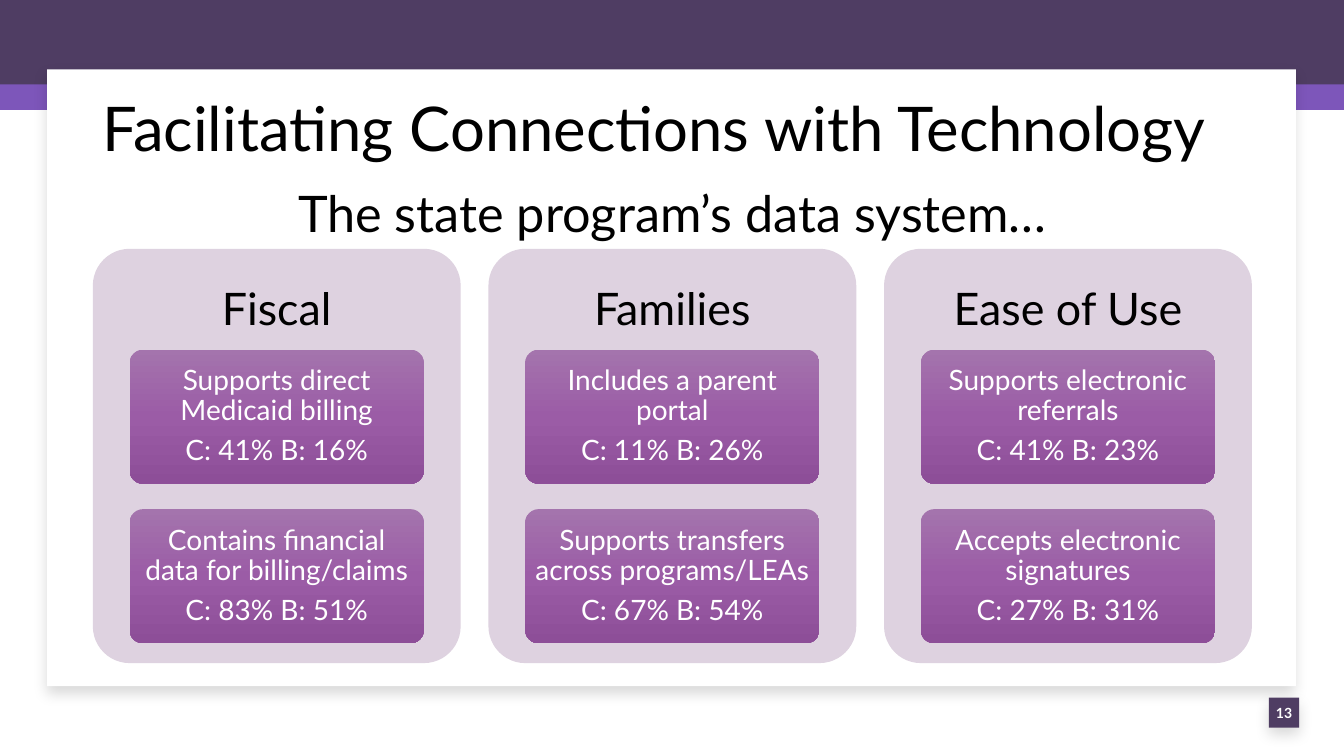
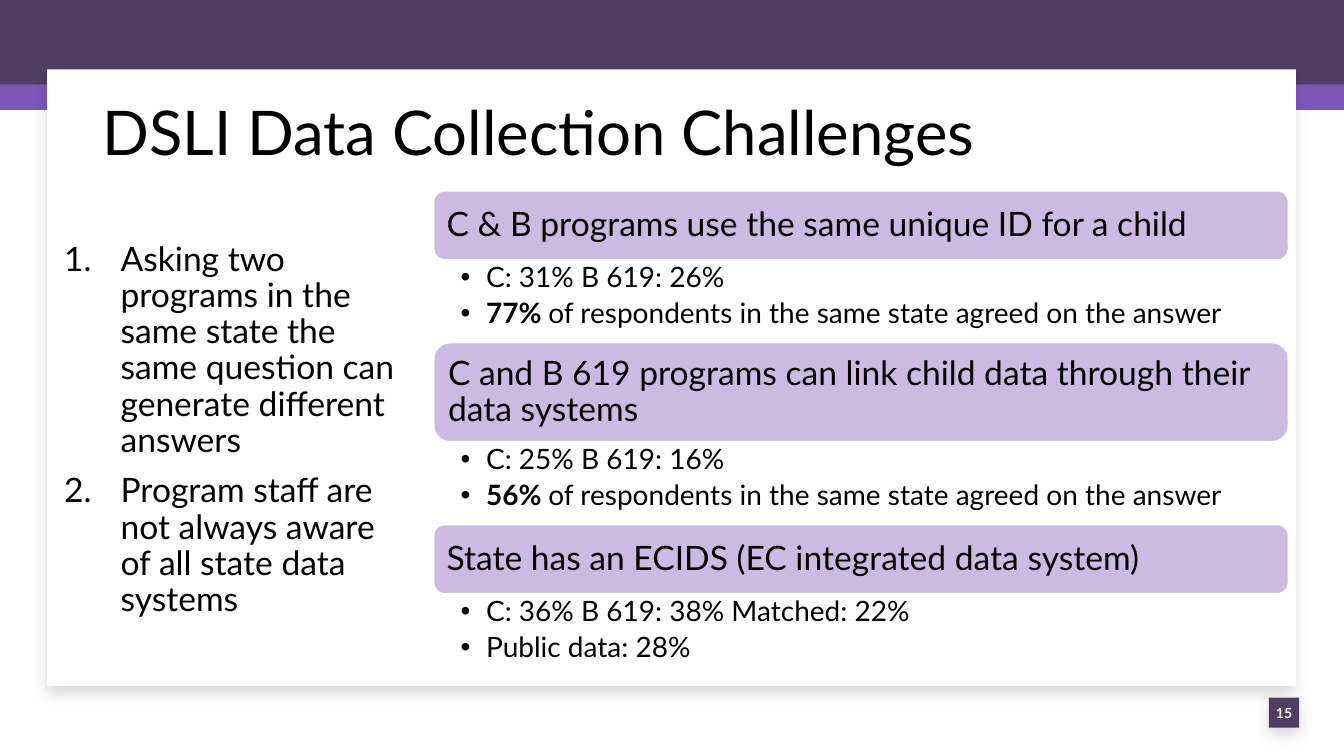
import pptx
import pptx.dml.color
import pptx.enum.shapes
import pptx.enum.text
import pptx.oxml
import pptx.oxml.ns
import pptx.util
from lxml import etree

Cm = pptx.util.Cm
Pt = pptx.util.Pt
SHAPE = pptx.enum.shapes.MSO_SHAPE
ALIGN = pptx.enum.text.PP_ALIGN
ANCHOR = pptx.enum.text.MSO_ANCHOR
qn = pptx.oxml.ns.qn

FONT = "Lato"
COLORS = {
    "white": "FFFFFF",
    "black": "000000",
    "band": "4F3D63",
    "stripe": "7D56BA",
    "panel": "DED2E0",
    "heading": "CBBBE3",
}
CARD_GRADIENT = [(0, "A474AD"), (50, "9B5CA6"), (100, "8D4E98")]
DEFAULT_INSETS = (0.25, 0.13, 0.25, 0.13)

PANELS = [
    ("Fiscal", [
        ("Supports direct Medicaid billing", "C: 41% B: 16%"),
        ("Contains financial data for billing/claims", "C: 83% B: 51%"),
    ]),
    ("Families", [
        ("Includes a parent portal", "C: 11% B: 26%"),
        ("Supports transfers across programs/LEAs", "C: 67% B: 54%"),
    ]),
    ("Ease of Use", [
        ("Supports electronic referrals", "C: 41% B: 23%"),
        ("Accepts electronic signatures", "C: 27% B: 31%"),
    ]),
]
CHALLENGES = [
    "Asking two programs in the same state the same question can generate different answers",
    "Program staff are not always aware of all state data systems",
]
AGREED = "of respondents in the same state agreed on the answer"
FINDINGS = [
    ("C & B programs use the same unique ID for a child", 1.76,
     [("", "C: 31% B 619: 26%"), ("77% ", AGREED)]),
    ("C and B 619 programs can link child data through their data systems", 2.51,
     [("", "C: 25% B 619: 16%"), ("56% ", AGREED)]),
    ("State has an ECIDS (EC integrated data system)", 1.76,
     [("", "C: 36% B 619: 38% Matched: 22%"), ("", "Public data: 28%")]),
]


def rgb(name):
    """Return the named colour."""
    return pptx.dml.color.RGBColor.from_string(COLORS[name])


def add_block(page, box, fill=None, kind=SHAPE.RECTANGLE, radius=None):
    """Add a preset shape without outline or shadow."""
    shape = page.shapes.add_shape(kind, *map(Cm, box))
    shape.shadow.inherit = False
    shape.line.fill.background()
    if fill:
        shape.fill.solid()
        shape.fill.fore_color.rgb = rgb(fill)
    if radius is not None:
        shape.adjustments[0] = radius
    return shape


def add_soft_shadow(shape):
    """Give a shape a faint shadow that falls downwards."""
    effects = shape._element.spPr.find(qn("a:effectLst"))
    shadow = etree.SubElement(effects, qn("a:outerShdw"), blurRad=str(Pt(10)),
                              dist=str(Pt(5)), dir="5400000", algn="t", rotWithShape="0")
    color = etree.SubElement(shadow, qn("a:srgbClr"), val=COLORS["black"])
    etree.SubElement(color, qn("a:alpha"), val="15000")


def fill_gradient(shape, stops):
    """Fill a shape with a gradient from top to bottom."""
    gradient = pptx.oxml.parse_xml(
        '<a:gradFill xmlns:a="http://schemas.openxmlformats.org/drawingml/2006/main"'
        ' rotWithShape="1"><a:gsLst/><a:lin ang="5400000" scaled="0"/></a:gradFill>')
    for position, color in stops:
        stop = etree.SubElement(gradient[0], qn("a:gs"), pos=str(position * 1000))
        etree.SubElement(stop, qn("a:srgbClr"), val=color)
    shape._element.spPr.find(qn("a:prstGeom")).addnext(gradient)


def set_bullet(para, indent, tag, **values):
    """Give a paragraph a hanging bullet or number."""
    properties = para._p.get_or_add_pPr()
    properties.set("marL", str(Cm(indent)))
    properties.set("indent", str(-Cm(indent)))
    if tag == "a:buChar":
        etree.SubElement(properties, qn("a:buFont"), typeface="Arial")
    etree.SubElement(properties, qn(tag), **values)


def write(shape, lines, size, color="black", align=ALIGN.LEFT, anchor=ANCHOR.MIDDLE,
          insets=DEFAULT_INSETS, spacing=0.9, before=0, after=0, bold=False, bullet=None):
    """Write lines into a shape; a line may be a pair of bold lead and plain rest."""
    frame = shape.text_frame
    frame.word_wrap = True
    frame.vertical_anchor = anchor
    (frame.margin_left, frame.margin_top,
     frame.margin_right, frame.margin_bottom) = map(Cm, insets)
    for index, line in enumerate(lines):
        lead, rest = line if isinstance(line, tuple) else ("", line)
        para = frame.add_paragraph() if index else frame.paragraphs[0]
        para.text = lead or rest
        if lead:
            para.add_run().text = rest
        if bullet:
            set_bullet(para, **bullet)
        para.alignment = align
        para.line_spacing = spacing
        para.space_before = Pt(before if index else 0)
        para.space_after = Pt(after)
        for position, span in enumerate(para.runs):
            span.font.name = FONT
            span.font.size = Pt(size)
            span.font.bold = bold or bool(lead and position == 0)
            span.font.color.rgb = rgb(color)


def add_text(page, box, lines, size, **style):
    """Add a text box."""
    write(page.shapes.add_textbox(*map(Cm, box)), lines, size, **style)


def add_page(deck, title, number, title_top):
    """Add a page with the shared bands, sheet, number and title."""
    page = deck.slides.add_slide(deck.slide_layouts[6])
    add_block(page, (0, 1.5, 33.87, 1.27), "stripe")
    add_block(page, (0, 0, 33.87, 2.13), "band")
    add_soft_shadow(add_block(page, (1.19, 1.75, 31.47, 15.54), "white"))
    badge = add_block(page, (31.98, 17.58, 0.76, 0.76), "band")
    add_soft_shadow(badge)
    write(badge, [number], 10, color="white", align=ALIGN.CENTER,
          insets=(0, 0, 0, 0), spacing=1, bold=True)
    add_text(page, (2.34, title_top, 29.21, 2.79), [title], 44)
    return page


def add_panel(page, box, heading, cards):
    """Add a panel with a heading and a stack of cards."""
    left, top, width, height = box
    add_block(page, box, "panel", SHAPE.ROUNDED_RECTANGLE, 0.1)
    add_text(page, (left, top, width, 3.13), [heading], 32, align=ALIGN.CENTER,
             insets=(0.33,) * 4, after=11.2)
    for index, lines in enumerate(cards):
        card_box = (left + 0.1 * width, top + 2.54 + index * 4.02, 0.8 * width, 3.38)
        card = add_block(page, card_box, kind=SHAPE.ROUNDED_RECTANGLE, radius=0.1)
        fill_gradient(card, CARD_GRADIENT)
        write(card, list(lines), 20, color="white", align=ALIGN.CENTER,
              insets=(0.15, 0.1, 0.15, 0.1), after=7)


def add_panels(page, box, panels, gap):
    """Spread panels evenly over a box."""
    left, top, width, height = box
    panel_width = (width - gap * (len(panels) - 1)) / len(panels)
    for index, (heading, cards) in enumerate(panels):
        panel_left = left + index * (panel_width + gap)
        add_panel(page, (panel_left, top, panel_width, height), heading, cards)


def add_findings(page, left, top, width, findings):
    """Stack headings, each with its bulleted details below."""
    detail_height = 2.07
    for heading, height, details in findings:
        bar = add_block(page, (left, top, width, height), "heading", SHAPE.ROUNDED_RECTANGLE)
        bar.line.color.rgb = rgb("white")
        bar.line.width = Pt(1.5)
        write(bar, [heading], 24, after=8.4, insets=(0.25,) * 4)
        top += height
        add_text(page, (left, top, width, detail_height), details, 20,
                 anchor=ANCHOR.TOP, insets=(0.69, 0.08, 0.41, 0.08), after=4,
                 bullet={"indent": 0.64, "tag": "a:buChar", "char": "•"})
        top += detail_height


def build_technology(deck):
    """Build the page on the data system."""
    page = add_page(deck, "Facilitating Connections with Technology", "13", 1.93)
    add_text(page, (6.86, 4.47, 20.17, 1.8), ["The state program’s data system…"], 36,
             align=ALIGN.CENTER, anchor=ANCHOR.TOP, spacing=1)
    add_panels(page, (2.34, 6.27, 29.21, 10.44), PANELS, 0.7)


def build_challenges(deck):
    """Build the page on data collection."""
    page = add_page(deck, "DSLI Data Collection Challenges", "15", 2.01)
    add_text(page, (1.37, 5.97, 9.12, 11.07), CHALLENGES, 24, anchor=ANCHOR.TOP, before=10,
             bullet={"indent": 1.42, "tag": "a:buAutoNum", "type": "arabicPeriod"})
    add_findings(page, 10.92, 4.8, 21.56, FINDINGS)


def main():
    """Build and save the deck."""
    deck = pptx.Presentation()
    deck.slide_width = Cm(33.87)
    deck.slide_height = Cm(19.05)
    build_technology(deck)
    build_challenges(deck)
    deck.save("out.pptx")


if __name__ == "__main__":
    main()
